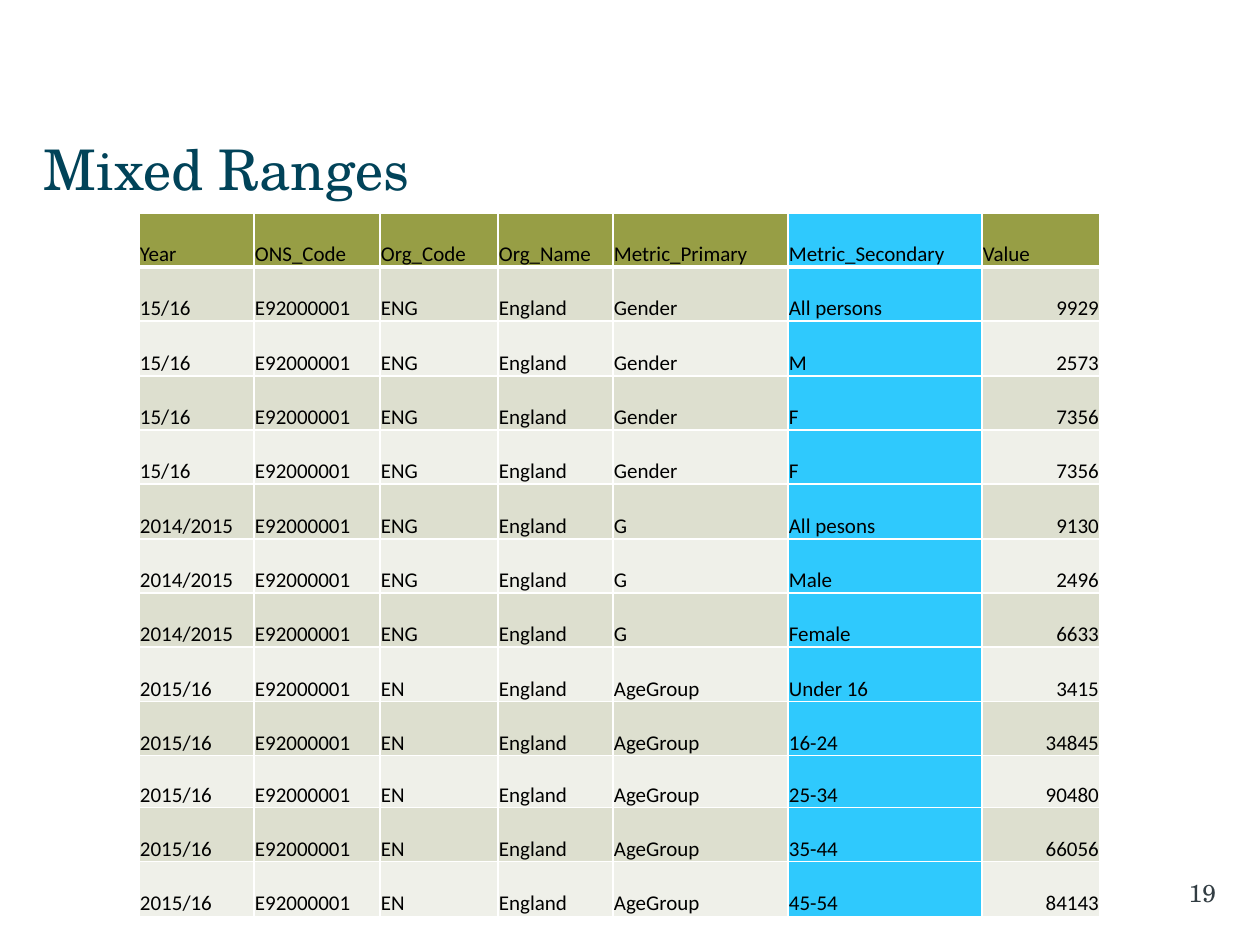
"""Build the "Mixed Ranges" slide with its table of inconsistent metric labels."""
from lxml.etree import SubElement
from pptx import Presentation
from pptx.dml.color import RGBColor
from pptx.enum.text import MSO_ANCHOR as Anchor, PP_ALIGN as Align
from pptx.oxml.ns import qn
from pptx.util import Emu, Pt

PX = 914400 / 126
COLORS = {
    "title": "014359",
    "number": "323D43",
    "text": "000000",
    "header": "979E45",
    "odd": "DDDFCF",
    "even": "EFF0E9",
    "highlight": "2FC9FD",
    "border": "FFFFFF",
}
HEADER = ["Year", "ONS_Code", "Org_Code", "Org_Name", "Metric_Primary", "Metric_Secondary", "Value"]
RECORDS = [
    ("15/16", "ENG", "Gender", "All persons", "9929"),
    ("15/16", "ENG", "Gender", "M", "2573"),
    ("15/16", "ENG", "Gender", "F", "7356"),
    ("15/16", "ENG", "Gender", "F", "7356"),
    ("2014/2015", "ENG", "G", "All pesons", "9130"),
    ("2014/2015", "ENG", "G", "Male", "2496"),
    ("2014/2015", "ENG", "G", "Female", "6633"),
    ("2015/16", "EN", "AgeGroup", "Under 16", "3415"),
    ("2015/16", "EN", "AgeGroup", "16-24", "34845"),
    ("2015/16", "EN", "AgeGroup", "25-34", "90480"),
    ("2015/16", "EN", "AgeGroup", "35-44", "66056"),
    ("2015/16", "EN", "AgeGroup", "45-54", "84143"),
]
COLUMN_WIDTHS = [115, 126, 118, 115, 175, 194, 118]
ROW_HEIGHTS = [54, 54, 55] * 3 + [54, 52, 54, 55]
SECONDARY = HEADER.index("Metric_Secondary")
VALUE = HEADER.index("Value")


def px(length):
    return Emu(round(length * PX))


def write(frame, text, font_name, size, color, align, anchor, insets):
    frame.word_wrap = True
    frame.vertical_anchor = anchor
    frame.margin_left, frame.margin_top, frame.margin_right, frame.margin_bottom = map(px, insets)
    paragraph = frame.paragraphs[0]
    paragraph.text = text
    paragraph.alignment = align
    paragraph.font.name = font_name
    paragraph.font.size = Pt(size)
    paragraph.font.color.rgb = RGBColor.from_string(COLORS[color])


deck = Presentation()
deck.slide_width, deck.slide_height = px(1260), px(945)
slide = deck.slides.add_slide(deck.slide_layouts[6])

page_number = slide.shapes.add_textbox(px(974), px(871), px(242), px(43))
write(page_number.text_frame, "19", "TeX Gyre Schola", 14, "number",
      Align.RIGHT, Anchor.MIDDLE, (13, 6, 0, 6))

rows = [HEADER] + [
    [year, "E92000001", org, "England", primary, secondary, value]
    for year, org, primary, secondary, value in RECORDS
]
metrics = slide.shapes.add_table(
    len(rows), len(HEADER), px(139), px(213), px(sum(COLUMN_WIDTHS)), px(sum(ROW_HEIGHTS))
).table
for column, width in zip(metrics.columns, COLUMN_WIDTHS):
    column.width = px(width)
for row, height in zip(metrics.rows, ROW_HEIGHTS):
    row.height = px(height)

for r, values in enumerate(rows):
    band = "header" if r == 0 else "odd" if r % 2 else "even"
    thick_side = {0: "lnB", 1: "lnT"}.get(r)
    for c, value in enumerate(values):
        cell = metrics.cell(r, c)
        align = Align.RIGHT if r and c == VALUE else Align.LEFT
        write(cell.text_frame, value, "Calibri", 12, "text", align, Anchor.BOTTOM, (1, 1, 1, 0))
        cell.vertical_anchor = Anchor.BOTTOM
        cell.margin_left = cell.margin_top = cell.margin_right = px(1)
        cell.margin_bottom = 0
        properties = cell._tc.get_or_add_tcPr()
        for side in ("lnL", "lnR", "lnT", "lnB"):
            line_width = Pt(3 if side == thick_side else 1)
            border = SubElement(properties, qn(f"a:{side}"), w=str(line_width))
            paint = SubElement(border, qn("a:solidFill"))
            SubElement(paint, qn("a:srgbClr"), val=COLORS["border"])
        cell.fill.solid()
        cell.fill.fore_color.rgb = RGBColor.from_string(
            COLORS["highlight" if c == SECONDARY else band])

title = slide.shapes.add_textbox(px(44), px(123), px(1171), px(90))
write(title.text_frame, "Mixed Ranges", "TeX Gyre Schola", 32, "title",
      Align.LEFT, Anchor.MIDDLE, (0, 6, 13, 6))

deck.save("out.pptx")
